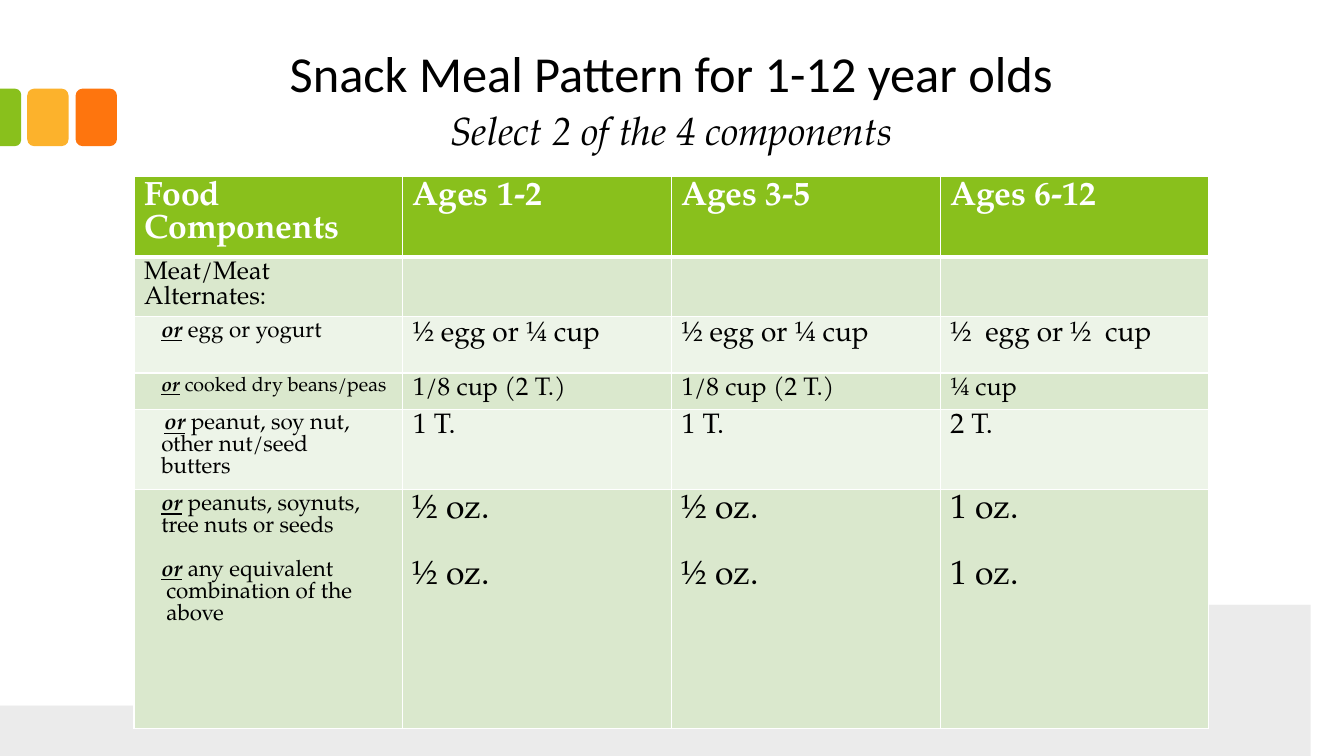
from lxml import etree
from pptx import Presentation
from pptx.dml.color import RGBColor
from pptx.enum.shapes import MSO_SHAPE
from pptx.enum.text import MSO_ANCHOR, PP_ALIGN
from pptx.oxml import parse_xml
from pptx.oxml.ns import nsdecls, qn
from pptx.util import Inches, Pt

ROUNDED = MSO_SHAPE.ROUNDED_RECTANGLE
HALF_ROUNDED = MSO_SHAPE.ROUND_2_SAME_RECTANGLE
BOTTOM = MSO_ANCHOR.BOTTOM
CENTER = PP_ALIGN.CENTER

SERIF, SANS = "TeX Gyre Pagella", "Calibri"
BLACK, WHITE, GREEN = "000000", "FFFFFF", "89C01C"
BAND_FILLS = ("DAE8CD", "EDF4E8")
LINE_RATIO = 0.98

ROW_HEIGHTS = (0.8, 0.59, 0.56, 0.36, 0.8, 2.37)
COLUMN_WIDTH = 2.665
HEADERS = ("Food Components", "Ages 1-2", "Ages 3-5", "Ages 6-12")

# Food lines: text, size, indent, whether a gap comes before.
# Then the size of the amounts and, for each age group, its lines.
FOODS = (
    ([("Meat/Meat Alternates:", 18, 0, False)], 18, ([], [], [])),
    ([("or egg or yogurt", 16, 0.17, False)], 20,
     (["½ egg or ¼ cup"], ["½ egg or ¼ cup"], ["½  egg or ½  cup"])),
    ([("or cooked dry beans/peas", 14, 0.17, False)], 18,
     (["1/8 cup (2 T.)"], ["1/8 cup (2 T.)"], ["¼ cup"])),
    ([("or peanut, soy nut,", 16, 0.2, False),
      ("other nut/seed", 16, 0.17, False),
      ("butters", 16, 0.17, False)], 20,
     (["1 T."], ["1 T."], ["2 T."])),
    ([("or peanuts, soynuts,", 16, 0.17, False),
      ("tree nuts or seeds", 16, 0.17, False),
      ("or any equivalent", 16, 0.17, True),
      ("combination of the", 16, 0.22, False),
      ("above", 16, 0.22, False)], 24,
     (["½ oz."] * 2, ["½ oz."] * 2, ["1 oz."] * 2)),
)


def rgb(value):
    return RGBColor.from_string(value)


def style_run(r, size, font=SERIF, color=BLACK, bold=False, italic=False):
    r.font.size, r.font.name = Pt(size), font
    r.font.bold, r.font.italic = bold, italic
    r.font.color.rgb = rgb(color)


def fill_shape(s, color):
    s.shadow.inherit = False
    s.fill.solid()
    s.fill.fore_color.rgb = rgb(color)
    s.line.fill.background()


def add_tab(slide, kind, left, top, width, height, color):
    s = slide.shapes.add_shape(kind, Inches(left), Inches(top),
                               Inches(width), Inches(height))
    fill_shape(s, color)
    return s


def curve(start, c1, c2, end, steps=24):
    """Points along a cubic Bezier curve, both ends included."""
    points = []
    for i in range(steps + 1):
        t = i / steps
        u = 1 - t
        weights = (u ** 3, 3 * u * u * t, 3 * u * t * t, t ** 3)
        points.append(tuple(sum(w * q[axis] for w, q in zip(weights, (start, c1, c2, end)))
                            for axis in (0, 1)))
    return points


def add_wave(slide, points, opacity):
    """Closed black outline with an opacity in percent."""
    builder = slide.shapes.build_freeform(*points[0], scale=Inches(1))
    builder.add_line_segments(points[1:], close=True)
    s = builder.convert_to_shape()
    fill_shape(s, BLACK)
    color = s.fill._xPr.find(qn("a:solidFill"))[0]
    etree.SubElement(color, qn("a:alpha")).set("val", str(opacity * 1000))


def add_background(slide):
    hill = curve((0, 6.75), (3.52, 6.83), (10.42, 6.55), (13.33, 6.18))
    add_wave(slide, hill + [(13.33, 7.5), (0, 7.5)], 8)
    upper = curve((0, 6.57), (6.52, 6.62), (9.71, 6.27), (13.33, 5.92))
    lower = curve((13.33, 6.12), (12.55, 6.23), (11.49, 6.33), (10.29, 6.41))
    lower += curve((10.29, 6.41), (6.98, 6.63), (2.58, 6.77), (0, 6.71))[1:]
    add_wave(slide, upper + lower, 5)
    for left, color in ((0.75, "FE750E"), (0.27, "FCB22C")):
        add_tab(slide, ROUNDED, left, 0.88, 0.41, 0.57, color)
    edge = add_tab(slide, HALF_ROUNDED, -0.18, 1.06, 0.57, 0.21, GREEN)
    edge.adjustments[0] = 0.29
    edge.rotation = 90


def add_title(slide):
    s = slide.shapes.add_textbox(Inches(1.33), Inches(0.17), Inches(10.66), Inches(1.42))
    tf = s.text_frame
    tf.word_wrap = True
    tf.vertical_anchor = BOTTOM
    tf.margin_left = tf.margin_right = Inches(0.13)
    tf.margin_top = tf.margin_bottom = Inches(0.07)
    p = tf.paragraphs[0]
    p.text = "Snack Meal Pattern for 1-12 year olds\vSelect 2 of the 4 components"
    p.alignment = CENTER
    p.line_spacing = Pt(36)
    style_run(p.runs[0], 36, SANS)
    style_run(p.runs[1], 28, italic=True)


def set_cell(cell, lines, fill, color=WHITE, bold=False, bottom=1):
    """Fill a cell with lines of (text, size, indent, gap before)."""
    cell.fill.solid()
    cell.fill.fore_color.rgb = rgb(fill)
    tcPr = cell._tc.get_or_add_tcPr()
    for i, (side, width) in enumerate((("L", 1), ("R", 1), ("T", 1), ("B", bottom))):
        tcPr.insert(i, parse_xml(
            f'<a:ln{side} {nsdecls("a")} w="{Pt(width)}"><a:solidFill>'
            f'<a:srgbClr val="{WHITE}"/></a:solidFill></a:ln{side}>'))
    tf = cell.text_frame
    for i, (text, size, indent, gap) in enumerate(lines):
        p = tf.add_paragraph() if i else tf.paragraphs[0]
        p.line_spacing = Pt(size * LINE_RATIO)
        p.space_before = Pt(size * LINE_RATIO if gap else 0)
        p._p.get_or_add_pPr().set("marL", str(Inches(indent)))
        if text.startswith("or "):
            r = p.add_run()
            r.text, text = text[:2], text[2:]
            style_run(r, size, color=color, bold=True, italic=True)
            r.font.underline = True
        r = p.add_run()
        r.text = text
        style_run(r, size, color=color, bold=bold)


def add_meal_table(slide):
    columns = len(HEADERS)
    table = slide.shapes.add_table(
        len(ROW_HEIGHTS), columns, Inches(1.33), Inches(1.75),
        Inches(COLUMN_WIDTH * columns), Inches(sum(ROW_HEIGHTS))).table
    for row, height in zip(table.rows, ROW_HEIGHTS):
        row.height = Inches(height)
    for i, header in enumerate(HEADERS):
        table.columns[i].width = Inches(COLUMN_WIDTH)
        set_cell(table.cell(0, i), [(header, 24, 0, False)], GREEN, bold=True, bottom=3)
    for i, (food, size, amounts) in enumerate(FOODS):
        fill = BAND_FILLS[i % 2]
        set_cell(table.cell(i + 1, 0), food, fill, BLACK)
        for j, amount in enumerate(amounts, 1):
            lines = [(text, size, 0, k > 0) for k, text in enumerate(amount)]
            set_cell(table.cell(i + 1, j), lines, fill, BLACK)


def main():
    prs = Presentation()
    prs.slide_width, prs.slide_height = Inches(13.33), Inches(7.5)
    slide = prs.slides.add_slide(prs.slide_layouts[6])
    add_background(slide)
    add_title(slide)
    add_meal_table(slide)
    prs.save("out.pptx")


if __name__ == "__main__":
    main()
